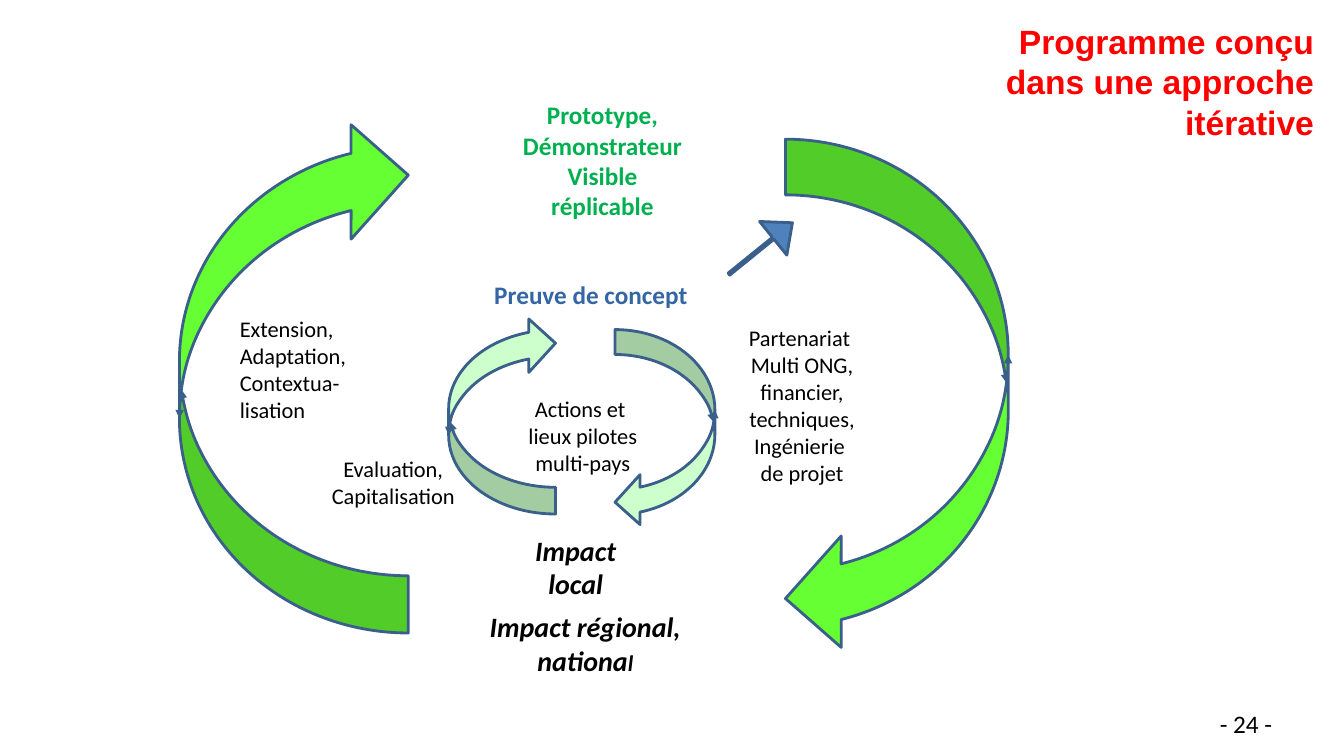
from dataclasses import dataclass

from lxml import etree
from pptx import Presentation
from pptx import util as u
from pptx.dml.color import RGBColor
from pptx.enum import shapes, text
from pptx.oxml import ns


@dataclass(frozen=True)
class Theme:
    ink: str = "000000"
    title: str = "FF0000"
    proof: str = "3465A4"
    proto: str = "00B050"
    edge: str = "3A5F8B"
    outer: str = "66FF33"
    inner: str = "CCFFCC"
    link: str = "4F81BD"
    body: str = "Calibri"
    head: str = "Arial"
    small: int = 16
    mid: int = 18
    big: int = 20
    huge: int = 24


T = Theme()
CELL = u.Inches(1)  # the slide is a grid of 13.33 columns by 7.5 rows
LEFT, MID, RIGHT = (text.PP_ALIGN.LEFT, text.PP_ALIGN.CENTER,
                    text.PP_ALIGN.RIGHT)


def cells(*vals):
    return [u.Emu(round(v * CELL)) for v in vals]


def arrow(slide, kind, box, fill, adj, turn=0, flip=False):
    """Filled arrow whose outline carries triangle ends."""
    shp = slide.shapes.add_shape(kind, *cells(*box))
    shp.shadow.inherit = False
    shp.rotation = turn
    for i, val in enumerate(adj):
        shp.adjustments[i] = val
    shp.fill.solid()
    shp.fill.fore_color.rgb = RGBColor.from_string(fill)
    shp.line.color.rgb = RGBColor.from_string(T.edge)
    shp.line.width = u.Pt(2)
    if flip:
        shp.element.spPr.find(ns.qn("a:xfrm")).set("flipV", "1")
    line = shp.element.spPr.find(ns.qn("a:ln"))
    for end in ("a:headEnd", "a:tailEnd"):
        etree.SubElement(line, ns.qn(end), type="triangle")


def label(slide, box, lines, size=T.small, color=T.ink, bold=False,
          ital=False, align=MID, face=T.body, wrap=False):
    """Text box with one paragraph per line."""
    frame = slide.shapes.add_textbox(*cells(*box)).text_frame
    frame.word_wrap = wrap
    frame.auto_size = text.MSO_AUTO_SIZE.SHAPE_TO_FIT_TEXT
    for i, line in enumerate(lines):
        para = frame.add_paragraph() if i else frame.paragraphs[0]
        para.text = line
        para.alignment = align
        font = para.font
        font.name, font.size = face, u.Pt(size)
        font.bold, font.italic = bold, ital
        font.color.rgb = RGBColor.from_string(color)
    return frame


def loop(slide, box, near, far, tall, fill):
    """Two curved arrows turning clockwise at the sides of the box."""
    x, y, w, h = box
    kind = shapes.MSO_SHAPE.CURVED_RIGHT_ARROW
    adj = (0.25, 0.5, 0.25)
    arrow(slide, kind, (x, y, near, tall), fill, adj, flip=True)
    arrow(slide, kind, (x + w - far, y + h - tall, far, tall), fill, adj,
          turn=180, flip=True)


def pilot(slide, box):
    """Inner cycle: local pilot actions."""
    x, y = box[:2]
    loop(slide, box, 1.06, 0.99, 1.96, T.inner)
    label(slide, (x + 0.69, y + 0.73, 1.28, 0.9),
          ["Actions et ", "lieux pilotes", "multi-pays"])
    label(slide, (x + 0.35, y - 0.42, 2.12, 0.4), ["Preuve de concept"],
          T.mid, T.proof, bold=True)
    label(slide, (x + 0.46, y + 2.1, 1.6, 0.76), ["Impact\vlocal"],
          T.big, bold=True, ital=True)


def scale(slide, box):
    """Outer cycle: regional and national extension."""
    x, y = box[:2]
    loop(slide, box, 2.27, 2.21, 5.11, T.outer)
    label(slide, (x + 5.5, y + 2, 1.35, 1.96),
          ["Partenariat ", "Multi ONG,", "financier,", "techniques,",
           "Ingénierie ", "de projet"])
    label(slide, (x + 1.41, y + 3.3, 1.42, 0.63),
          ["Evaluation,", "Capitalisation"])
    label(slide, (x + 0.5, y + 1.91, 1.3, 1.16),
          ["Extension,", "Adaptation,", "Contextua-", "lisation"],
          align=LEFT)
    impact = label(slide, (x + 2.88, y + 4.83, 2.29, 0.76),
                   ["Impact régional,", "nationa"],
                   T.big, bold=True, ital=True)
    last = impact.paragraphs[1].add_run()
    last.text = "l"
    last.font.size = u.Pt(T.small)
    label(slide, (x + 3.21, y - 0.23, 1.97, 1.3),
          ["Prototype,", "Démonstrateur", "Visible", "réplicable"],
          T.mid, T.proto, bold=True)
    # Step from proof of concept to the outer cycle
    arrow(slide, shapes.MSO_SHAPE.RIGHT_ARROW,
          (x + 5.36, y + 1.08, 0.81, 0.43), T.link, (0.06, 0.57), turn=321)


def margins(slide, box):
    """Title at top right and page number at bottom right."""
    x, y, w, h = box
    label(slide, (x + w - 3.88, y + 0.16, 3.68, 1.3),
          ["Programme conçu dans une approche itérative"],
          T.huge, T.title, bold=True, align=RIGHT, face=T.head, wrap=True)
    label(slide, (x + w - 1.33, y + h - 0.52, 1.2, 0.4), ["- 24 -"],
          T.mid, align=LEFT, wrap=True)


def main():
    deck = Presentation()
    deck.slide_width, deck.slide_height = cells(13.33, 7.5)
    slide = deck.slides.add_slide(deck.slide_layouts[6])
    pilot(slide, (4.45, 3.14, 2.64, 2.09))
    scale(slide, (1.78, 1.17, 8.22, 5.32))
    margins(slide, (0, 0, 13.33, 7.5))
    deck.save("out.pptx")


if __name__ == "__main__":
    main()
